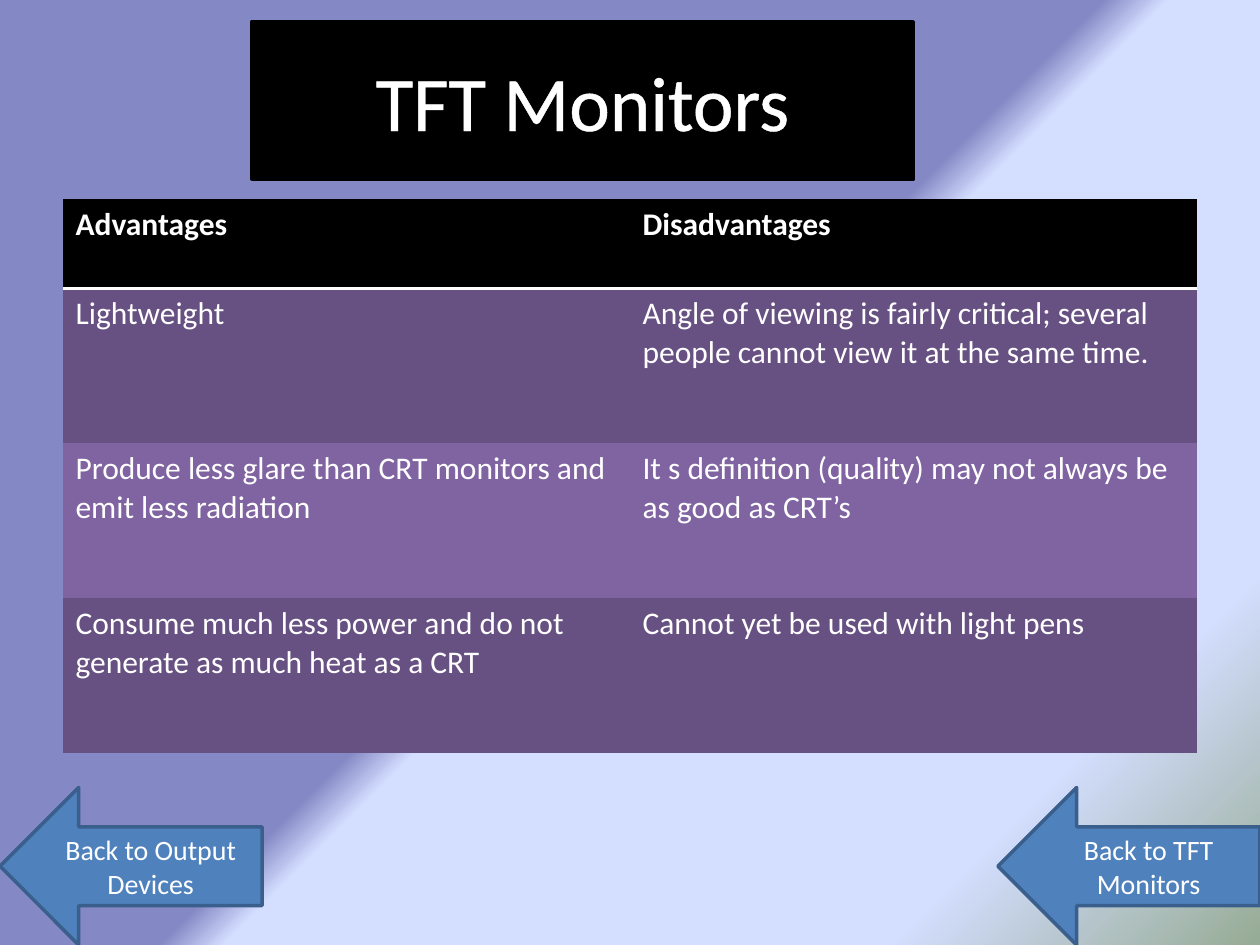
from lxml.etree import SubElement
from pptx import Presentation
from pptx.dml.color import RGBColor
from pptx.enum.shapes import MSO_SHAPE
from pptx.enum.text import MSO_ANCHOR, PP_ALIGN
from pptx.oxml import parse_xml
from pptx.oxml.ns import qn
from pptx.util import Inches, Pt

FONT = "Calibri"
WHITE, BLACK = "FFFFFF", "000000"
BLUE, NAVY = "4F81BD", "3A5F8C"
PLUM, LILAC = "675082", "8064A2"
PLAIN = "{2D5ABB26-0587-4C30-8999-92F81FD0307C}"
STOPS = [(50, "8488C4"), (53, "D4DEFF"), (83, "D4DEFF"), (100, "96AB94")]
ROWS = [
    ("Advantages", "Disadvantages"),
    ("Lightweight",
     "Angle of viewing is fairly critical; several people cannot view it at the same time."),
    ("Produce less glare than CRT monitors and emit less radiation",
     "It s definition (quality) may not always be as good as CRT’s"),
    ("Consume much less power and do not generate as much heat as a CRT",
     "Cannot yet be used with light pens"),
]
LINKS = [(0, "Back to Output Devices"), (7.92, "Back to TFT Monitors")]


def color(code):
    return RGBColor.from_string(code)


def stroke(tag, code, width):
    space = "http://schemas.openxmlformats.org/drawingml/2006/main"
    return parse_xml(
        f'<a:{tag} xmlns:a="{space}" w="{Pt(width)}"><a:solidFill>'
        f'<a:srgbClr val="{code}"/></a:solidFill></a:{tag}>')


def write(frame, text, size=18, bold=False, align=PP_ALIGN.LEFT, edge=0):
    frame.word_wrap = True
    para = frame.paragraphs[0]
    para.alignment = align
    run = para.add_run()
    run.text = text
    font = run.font
    font.name, font.size, font.bold = FONT, Pt(size), bold
    font.fill.solid()
    font.fill.fore_color.rgb = color(WHITE)
    if edge:
        run._r.get_or_add_rPr().insert(0, stroke("ln", WHITE, edge))


class Deck:
    """Holds the style and the current slide."""

    def __init__(self):
        self.show = Presentation()
        self.show.slide_width, self.show.slide_height = Inches(10), Inches(7.5)
        self.slide = self.show.slides.add_slide(self.show.slide_layouts[6])

    def backdrop(self, stops, angle):
        fill = self.slide.background.fill
        fill.gradient()
        grad = self.slide.background._cSld.find(".//" + qn("a:gradFill"))
        group = grad.find(qn("a:gsLst"))
        for old in list(group):
            group.remove(old)
        for place, code in stops:
            stop = SubElement(group, qn("a:gs"), pos=str(place * 1000))
            SubElement(stop, qn("a:srgbClr"), val=code)
        line = grad.find(qn("a:lin"))
        line.set("ang", str(angle * 60000))
        line.set("scaled", "0")

    def shape(self, kind, box, fill, line, text, **style):
        item = self.slide.shapes.add_shape(kind, *map(Inches, box))
        item.shadow.inherit = False
        item.fill.solid()
        item.fill.fore_color.rgb = color(fill)
        item.line.color.rgb = color(line)
        item.line.width = Pt(2)
        item.text_frame.vertical_anchor = MSO_ANCHOR.MIDDLE
        write(item.text_frame, text, align=PP_ALIGN.CENTER, **style)

    def table(self, box, rows, highs, fills):
        frame = self.slide.shapes.add_table(len(rows), len(rows[0]), *map(Inches, box))
        grid = frame.table
        grid._tbl.tblPr.find(qn("a:tableStyleId")).text = PLAIN
        for i, row in enumerate(rows):
            grid.rows[i].height = Inches(highs[i])
            for j, text in enumerate(row):
                cell = grid.cell(i, j)
                cell.fill.solid()
                cell.fill.fore_color.rgb = color(fills[i])
                write(cell.text_frame, text, bold=i == 0)
                if i == 0:
                    cell._tc.get_or_add_tcPr().insert(0, stroke("lnB", WHITE, 2))


def main():
    deck = Deck()
    deck.backdrop(STOPS, 45)
    deck.shape(MSO_SHAPE.RECTANGLE, (2, 0.17, 5.25, 1.25), BLACK, BLACK,
               "TFT Monitors", size=44, edge=1.45)
    deck.table((0.5, 1.58, 9, 4.42), ROWS, [0.71] + [1.23] * 3,
               [BLACK, PLUM, LILAC, PLUM])
    for left, text in LINKS:
        deck.shape(MSO_SHAPE.LEFT_ARROW, (left, 6.25, 2.08, 1.25), BLUE, NAVY,
                   text, size=16)
    deck.show.save("out.pptx")


if __name__ == "__main__":
    main()
